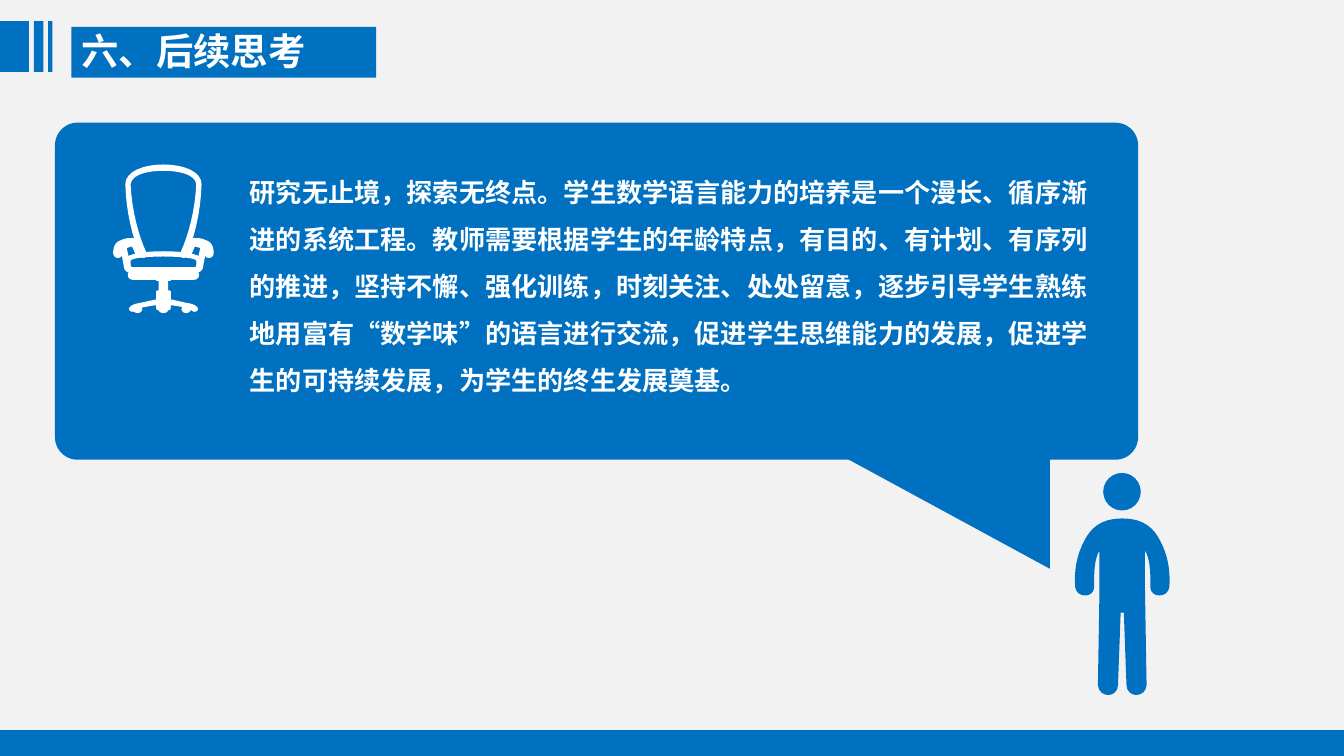
from dataclasses import dataclass

import lxml.etree
import pptx
import pptx.dml.color
import pptx.enum.shapes
import pptx.enum.text
import pptx.oxml.ns
import pptx.util
from pptx.util import Cm

BLUE = "0070C0"
WHITE = "FFFFFF"
GREY = "F2F2F2"
FONT = "Noto Sans CJK SC"
CURVE_STEPS = 8
CHAIR_AXIS = 3.09
PERSON_AXIS = 21.21
SHAPE = pptx.enum.shapes.MSO_SHAPE

Point = tuple[float, float]
Segment = tuple[Point, ...]


@dataclass
class Block:
    """A preset shape, in centimetres."""
    left: float
    top: float
    width: float
    height: float
    kind: int = SHAPE.RECTANGLE
    color: str = BLUE
    adjust: float | None = None
    rotation: float = 0


@dataclass
class Label:
    text: str
    left: float
    top: float
    width: float
    height: float
    size: float
    spacing: float = 1.0


@dataclass
class Outline:
    """Start point, then segments: one point is a line, three are a Bézier curve.

    x is the distance to the left of an icon's axis, y is measured on the page.
    """
    start: Point
    segments: list[Segment]

    def points(self) -> list[Point]:
        result = [self.start]
        for segment in self.segments:
            if len(segment) == 1:
                result.append(segment[0])
                continue
            corners = (result[-1], *segment)
            for step in range(1, CURVE_STEPS + 1):
                t = step / CURVE_STEPS
                weights = ((1 - t) ** 3, 3 * t * (1 - t) ** 2, 3 * t * t * (1 - t), t ** 3)
                result.append((sum(w * x for w, (x, _) in zip(weights, corners)),
                               sum(w * y for w, (_, y) in zip(weights, corners))))
        return result


PERSON_BODY = Outline((0, 9.8), [
    ((0.42, 9.8), (0.6, 10), (0.71, 10.21)),
    ((0.87, 10.5), (0.91, 10.8), (0.89, 11.1)),
    ((0.86, 11.31), (0.54, 11.31), (0.53, 11.1)),
    ((0.54, 10.8), (0.52, 10.55), (0.43, 10.41)),
    ((0.43, 11.15),), ((0.46, 12.95),),
    ((0.44, 13.2), (0.09, 13.2), (0.08, 12.95)),
    ((0.03, 11.58),),
])
CHAIR_BACK = Outline((0, 3.11), [
    ((0.39, 3.11), (0.72, 3.25), (0.72, 3.48)),
    ((0.71, 4), (0.58, 4.5), (0.44, 4.83)),
    ((0.41, 4.91), (0.29, 4.88), (0.32, 4.78)),
    ((0.47, 4.45), (0.6, 3.98), (0.62, 3.48)),
    ((0.6, 3.3), (0.3, 3.23), (0, 3.23)),
])
SEAT_RIM = Outline((0, 4.75), [
    ((0.45, 4.75), (0.75, 4.82), (0.75, 4.93)),
    ((0.75, 5.03),),
    ((0.75, 5.1), (0.7, 5.16), (0.6, 5.16)),
    ((0, 5.16),),
])
SEAT_HOLE = Outline((0, 4.85), [
    ((0.3, 4.85), (0.62, 4.88), (0.62, 4.93)),
    ((0.62, 5.03),), ((0.6, 5.05),), ((0, 5.05),),
])
CHAIR_LEG = Outline((0.65, 5.84), [
    ((0.65, 5.91), (0.52, 5.91), (0.52, 5.84)),
    ((0.4, 5.81), (0.2, 5.77), (0.11, 5.77)),
    ((0.04, 5.77), (0.04, 5.66), (0.14, 5.66)),
    ((0.25, 5.68), (0.4, 5.72), (0.52, 5.74)),
    ((0.58, 5.76), (0.65, 5.79), (0.65, 5.84)),
])
ARM_SUPPORT = Outline((0.75, 5.03), [
    ((0.75, 5.1), (0.62, 5.1), (0.62, 5.03)),
    ((0.7, 4.67),), ((0.6, 4.65),), ((0.52, 4.83),),
    ((0.5, 4.9), (0.38, 4.87), (0.41, 4.8)),
    ((0.5, 4.57),),
    ((0.5, 4.53), (0.55, 4.52), (0.57, 4.53)),
    ((0.77, 4.57),),
    ((0.8, 4.58), (0.83, 4.6), (0.83, 4.62)),
])
ARMREST = Outline((0.57, 4.65), [
    ((0.5, 4.63), (0.48, 4.48), (0.62, 4.5)),
    ((0.7, 4.5), (0.76, 4.52), (0.8, 4.54)),
    ((0.9, 4.57), (0.95, 4.65), (0.95, 4.78)),
    ((0.95, 4.91), (0.77, 4.91), (0.77, 4.78)),
    ((0.77, 4.7),), ((0.73, 4.7),),
])

BLOCKS = [
    Block(1.35, 0.51, 5.76, 0.96),
    Block(0, 0.4, 0.55, 0.96),
    Block(0.64, 0.4, 0.18, 0.96),
    Block(0.91, 0.4, 0.08, 0.96),
    Block(0, 13.8, 25.4, 0.49),
    Block(PERSON_AXIS - 0.36, 8.94, 0.71, 0.71, SHAPE.OVAL),
    Block(1.04, 2.32, 20.47, 6.37, SHAPE.ROUNDED_RECTANGLE, adjust=0.067),
    Block(15.75, 8.53, 4.09, 2.22, SHAPE.ISOSCELES_TRIANGLE, adjust=0, rotation=180),
]
# Chair parts centred on its axis: width, top, height, corner adjustment
CHAIR_PARTS = [
    (0.18, 5.16, 0.61, 0.5),
    (1.35, 5.11, 0.18, 0.5),
    (0.28, 5.49, 0.32, 0.1),
    (0.28, 5.26, 0.05, 0.3),
    (0.28, 5.77, 0.1, 0.5),
]
# Casters: centre offset from the axis, top, width, height
CASTERS = [(-0.49, 5.77, 0.18, 0.15), (0, 5.79, 0.18, 0.13), (0.43, 5.77, 0.18, 0.15)]

LABELS = [
    Label("六、后续思考", 1.35, 0.43, 5.51, 1.04, 20),
    Label("研究无止境，探索无终点。学生数学语言能力的培养是一个漫长、循序渐进的系统工程。"
          "教师需要根据学生的年龄特点，有目的、有计划、有序列的推进，坚持不懈、强化训练，"
          "时刻关注、处处留意，逐步引导学生熟练地用富有“数学味”的语言进行交流，"
          "促进学生思维能力的发展，促进学生的可持续发展，为学生的终生发展奠基。",
          4.47, 2.92, 16.46, 4.75, 14, 1.5),
]


def paint(fill, color: str) -> None:
    fill.solid()
    fill.fore_color.rgb = pptx.dml.color.RGBColor.from_string(color)


def finish(shape, color: str) -> None:
    """Plain fill without line or shadow."""
    paint(shape.fill, color)
    shape.line.fill.background()
    shape.shadow.inherit = False


def draw_block(page, block: Block) -> None:
    shape = page.shapes.add_shape(block.kind, Cm(block.left), Cm(block.top),
                                  Cm(block.width), Cm(block.height))
    if block.adjust is not None:
        shape.adjustments[0] = block.adjust
    shape.rotation = block.rotation
    finish(shape, block.color)


def draw_contours(page, contours: list[list[Point]], axis: float, color: str) -> None:
    placed = [[(Cm(axis - x), Cm(y)) for x, y in contour] for contour in contours]
    builder = page.shapes.build_freeform(*placed[0][0])
    for index, contour in enumerate(placed):
        if index:
            builder.move_to(*contour[0])
        builder.add_line_segments(contour[1:], close=True)
    finish(builder.convert_to_shape(), color)


def mirrored(points: list[Point]) -> list[Point]:
    return [(-x, y) for x, y in reversed(points)]


def draw_symmetric(page, halves: list[Outline], axis: float, color: str) -> None:
    """Join each left half to its mirror image."""
    contours = [half.points() + mirrored(half.points()) for half in halves]
    draw_contours(page, contours, axis, color)


def draw_pair(page, outline: Outline, axis: float, color: str) -> None:
    """Draw an outline on both sides of the axis."""
    for points in (outline.points(), mirrored(outline.points())):
        draw_contours(page, [points], axis, color)


def draw_chair(page) -> None:
    for width, top, height, adjust in CHAIR_PARTS:
        draw_block(page, Block(CHAIR_AXIS - width / 2, top, width, height,
                               SHAPE.ROUNDED_RECTANGLE, WHITE, adjust))
    for offset, top, width, height in CASTERS:
        draw_block(page, Block(CHAIR_AXIS + offset - width / 2, top, width, height,
                               SHAPE.OVAL, WHITE))
    for halves in ([CHAIR_BACK], [SEAT_RIM, SEAT_HOLE]):
        draw_symmetric(page, halves, CHAIR_AXIS, WHITE)
    for outline in (CHAIR_LEG, ARM_SUPPORT, ARMREST):
        draw_pair(page, outline, CHAIR_AXIS, WHITE)


def draw_label(page, label: Label) -> None:
    box = page.shapes.add_textbox(Cm(label.left), Cm(label.top), Cm(label.width), Cm(label.height))
    frame = box.text_frame
    frame.word_wrap = True
    frame.auto_size = pptx.enum.text.MSO_AUTO_SIZE.SHAPE_TO_FIT_TEXT
    if label.size == 20:
        frame.margin_left = frame.margin_right = Cm(0.19)
        frame.margin_top = frame.margin_bottom = Cm(0.1)
    frame.text = label.text
    para = frame.paragraphs[0]
    para.line_spacing = label.spacing
    font = para.runs[0].font
    font.size = pptx.util.Pt(label.size)
    font.bold = True
    font.name = FONT
    paint(font.fill, WHITE)
    span = para.runs[0]._r.get_or_add_rPr()
    east_asian = lxml.etree.Element(pptx.oxml.ns.qn("a:ea"), typeface=FONT)
    span.find(pptx.oxml.ns.qn("a:latin")).addnext(east_asian)


def main() -> None:
    deck = pptx.Presentation()
    deck.slide_width, deck.slide_height = Cm(25.4), Cm(14.29)
    page = deck.slides.add_slide(deck.slide_layouts[6])
    paint(page.background.fill, GREY)
    for block in BLOCKS:
        draw_block(page, block)
    draw_symmetric(page, [PERSON_BODY], PERSON_AXIS, BLUE)
    draw_chair(page)
    for label in LABELS:
        draw_label(page, label)
    deck.save("out.pptx")


if __name__ == "__main__":
    main()
